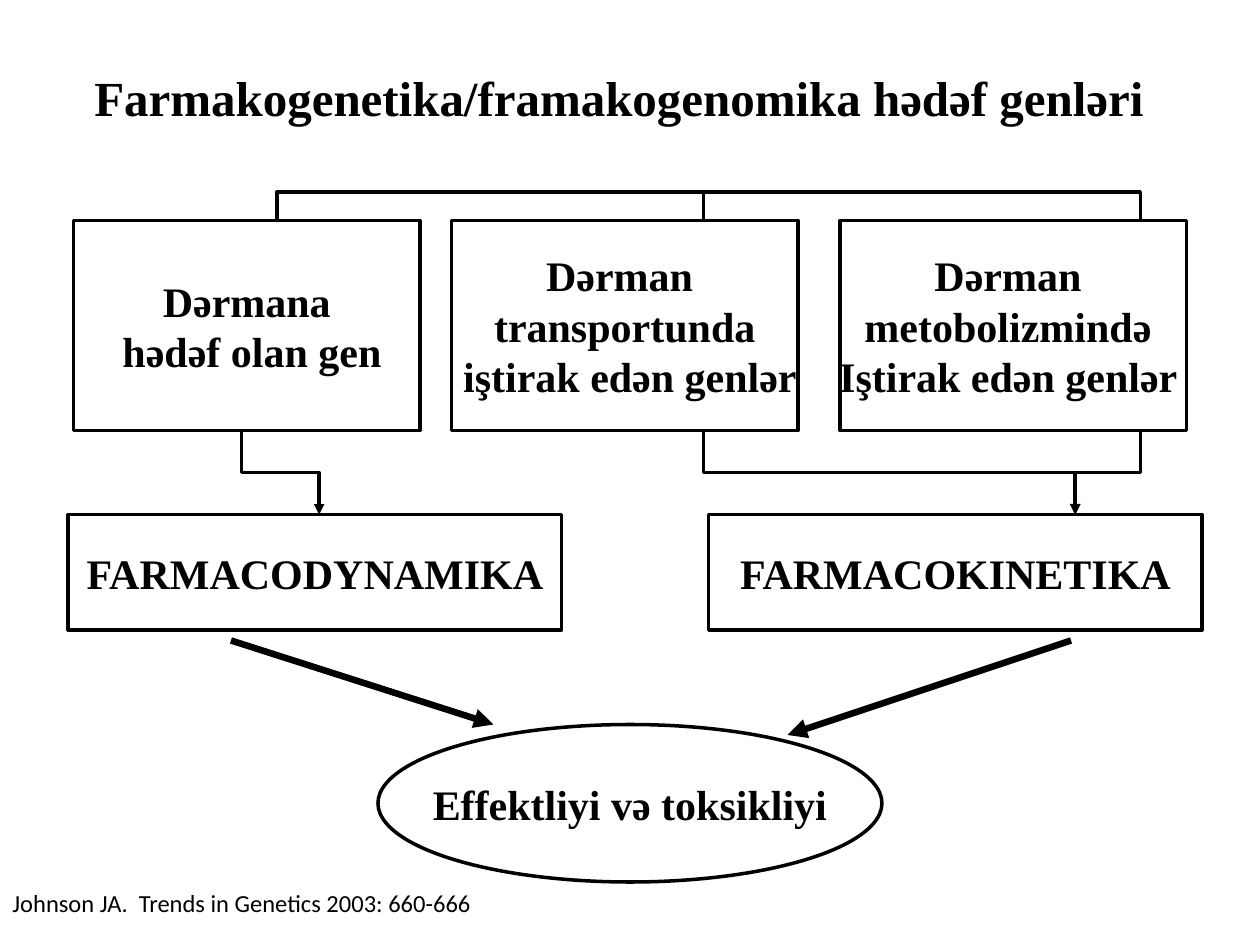
from typing import NamedTuple

from lxml.etree import SubElement
from pptx import Presentation
from pptx.dml.color import RGBColor
from pptx.enum.shapes import MSO_CONNECTOR as Link, MSO_SHAPE as Form
from pptx.enum.text import MSO_ANCHOR as Anchor, PP_ALIGN as Align
from pptx.oxml.ns import qn
from pptx.util import Emu, Inches, Pt

BLACK = RGBColor(0x00, 0x00, 0x00)
WHITE = RGBColor(0xFF, 0xFF, 0xFF)
WIDTH, HEIGHT = Inches(10), Inches(7.5)
COLUMNS = 120
CELL = WIDTH / COLUMNS
HAIR = 1588
SERIF = {"name": "Times New Roman", "bold": True}
LABEL = {**SERIF, "size": Pt(24)}
HEADING = {**SERIF, "size": Pt(28)}
CITATION = {"name": "Calibri", "bold": False, "size": Pt(14)}


class Area(NamedTuple):
    column: float
    row: float
    columns: float
    rows: float


class Node(NamedTuple):
    area: Area
    lines: list[str]
    form: Form = Form.RECTANGLE


class Route(NamedTuple):
    start: tuple[float, float]
    end: tuple[float, float]
    bend: float = 0
    arrow: bool = True


GENE_ROW, GENE_END, EFFECT_ROW = 21, 41, 49
GENES = [
    Node(Area(column, GENE_ROW, 33, 20), lines)
    for column, lines in [
        (7, ["Dərmana", " hədəf olan gen"]),
        (80, ["Dərman ", "metobolizmində ", "Iştirak edən genlər "]),
        (43, ["Dərman ", "transportunda", " iştirak edən genlər"]),
    ]
]
EFFECTS = [
    Node(Area(67.5, EFFECT_ROW, 47, 11), ["FARMACOKINETIKA"]),
    Node(Area(6.5, EFFECT_ROW, 47, 11), ["FARMACODYNAMIKA"]),
    Node(Area(36, 69, 48, 15), ["Effektliyi və toksikliyi"], Form.OVAL),
]
TARGET, TRANSPORT, METABOLISM = 26.4, 67, 108.6
BRACKETS = [
    Route((left, GENE_ROW), (right, GENE_ROW), -3, False)
    for left, right in [(TARGET, TRANSPORT), (TRANSPORT, METABOLISM)]
]
DROPS = [
    Route((start, GENE_END), (end, EFFECT_ROW), 4)
    for start, end in [(23, 30.4), (METABOLISM, 102.4), (TRANSPORT, 102.4)]
]
ARROWS = [Route((22, 61), (47, 69)), Route((102, 61), (75, 70))]


def cells(*counts: float) -> list[Emu]:
    """Turn counts of grid cells into lengths."""
    return [Emu(round(count * CELL)) for count in counts]


def write(frame, lines: list[str], style: dict, align: Align, anchor: Anchor, wrap: bool) -> None:
    """Fill a text frame, one paragraph a line."""
    frame.word_wrap, frame.vertical_anchor = wrap, anchor
    for index, line in enumerate(lines):
        paragraph = frame.add_paragraph() if index else frame.paragraphs[0]
        paragraph.alignment = align
        run = paragraph.add_run()
        run.text = line
        run.font.color.rgb = BLACK
        for key, value in style.items():
            setattr(run.font, key, value)


def draw_node(slide, node: Node) -> None:
    """Draw an outlined shape with its label."""
    shape = slide.shapes.add_shape(node.form, *cells(*node.area))
    shape.shadow.inherit = False
    shape.fill.solid()
    shape.fill.fore_color.rgb = WHITE
    shape.line.color.rgb, shape.line.width = BLACK, Pt(2)
    write(shape.text_frame, node.lines, LABEL, Align.CENTER, Anchor.MIDDLE, False)


def finish(link, width: float, arrow: bool) -> None:
    """Give a connector its line, arrowhead and empty effect list."""
    link.line.color.rgb, link.line.width = BLACK, Pt(width)
    if arrow:
        SubElement(link.line._get_or_add_ln(), qn("a:tailEnd"), type="triangle")
    SubElement(link._element.spPr, qn("a:effectLst"))


def draw_arrow(slide, route: Route) -> None:
    """Draw a straight heavy arrow."""
    link = slide.shapes.add_connector(Link.STRAIGHT, *cells(*route.start, *route.end))
    finish(link, 3.75, route.arrow)


def draw_elbow(slide, route: Route) -> None:
    """Draw an elbow that leaves and arrives vertically, turning at the bend."""
    x1, y1, x2, y2, bend = cells(*route.start, *route.end, route.bend)
    drop, span = max(y2 - y1, HAIR), abs(x2 - x1)
    left = (x1 + x2 - drop) // 2
    top = (y1 + y2 - span) // 2
    link = slide.shapes.add_connector(Link.ELBOW, left, top, left + drop, top + span)
    properties = link._element.spPr
    frame = properties.find(qn("a:xfrm"))
    frame.set("rot", str(90 * 60000))
    if x2 > x1:
        frame.set("flipV", "1")
    guides = properties.find(qn("a:prstGeom")).get_or_add_avLst()
    SubElement(guides, qn("a:gd"), name="adj1", fmla=f"val {round(bend / drop * 100000)}")
    finish(link, 2, route.arrow)


def draw_text(slide, area: Area, line: str, style: dict, align: Align, anchor: Anchor) -> None:
    """Draw a plain line of text."""
    box = slide.shapes.add_textbox(*cells(*area))
    write(box.text_frame, [line], style, align, anchor, True)


def main() -> None:
    """Build and save the slide."""
    deck = Presentation()
    deck.slide_width, deck.slide_height = WIDTH, HEIGHT
    slide = deck.slides.add_slide(deck.slide_layouts[6])
    draw_text(slide, Area(5, 4.7, 107.9, 9), "Farmakogenetika/framakogenomika hədəf genləri",
              HEADING, Align.CENTER, Anchor.MIDDLE)
    for node in GENES:
        draw_node(slide, node)
    for bracket in BRACKETS:
        draw_elbow(slide, bracket)
    for node in EFFECTS:
        draw_node(slide, node)
    for drop in DROPS:
        draw_elbow(slide, drop)
    for arrow in ARROWS:
        draw_arrow(slide, arrow)
    draw_text(slide, Area(0, 84, 51.7, 4), "Johnson JA.  Trends in Genetics 2003: 660-666",
              CITATION, Align.LEFT, Anchor.TOP)
    deck.save("out.pptx")


if __name__ == "__main__":
    main()
